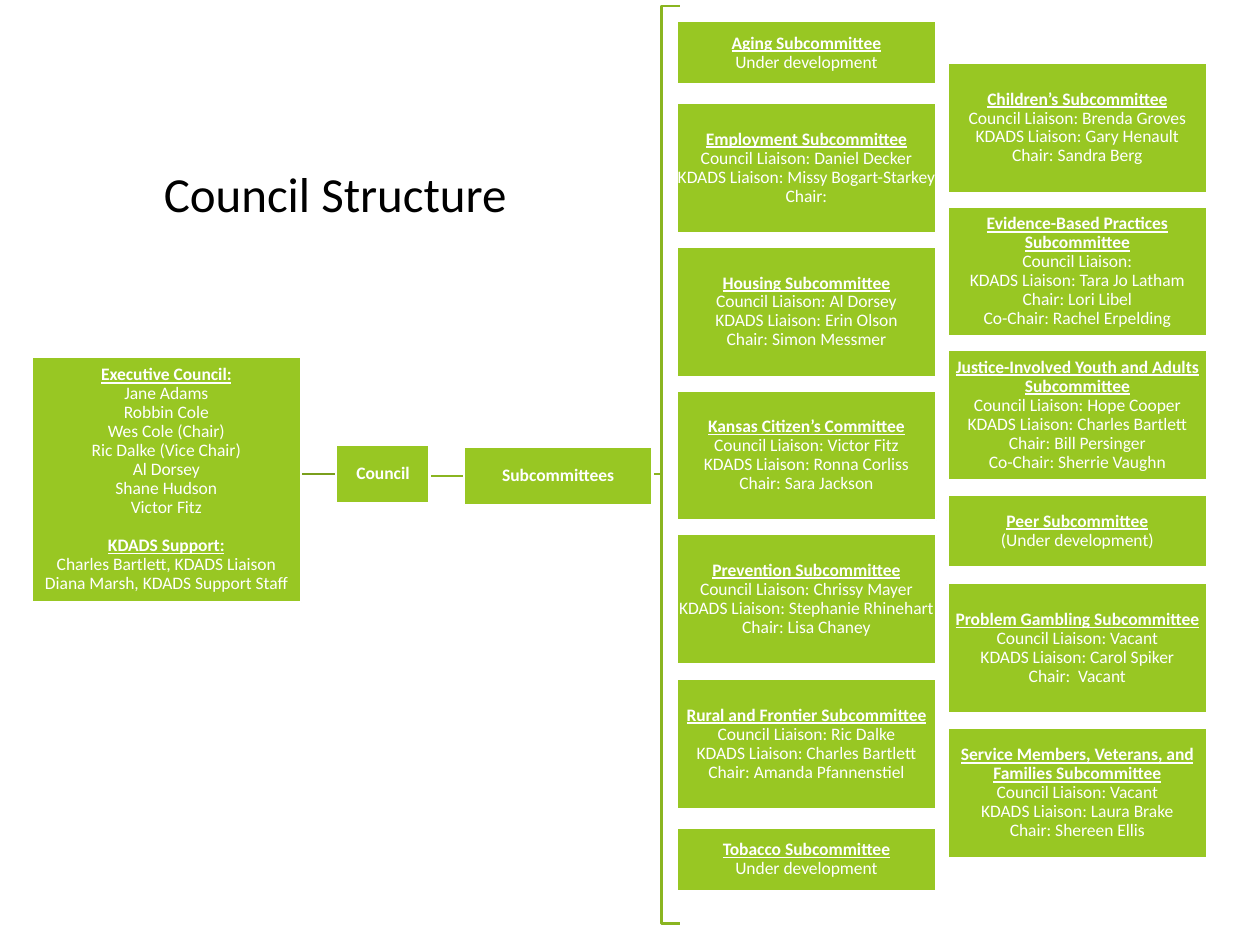
from dataclasses import dataclass

from lxml.etree import SubElement
from pptx import Presentation
from pptx.dml.color import RGBColor
from pptx.enum.shapes import MSO_CONNECTOR, MSO_SHAPE
from pptx.enum.text import MSO_ANCHOR, PP_ALIGN
from pptx.oxml.ns import qn
from pptx.util import Inches, Pt


@dataclass(frozen=True)
class Theme:
    font: str = "Calibri"
    title_size: Pt = Pt(28)
    label_size: Pt = Pt(10)
    line_width: Pt = Pt(1.25)
    black: RGBColor = RGBColor(0x00, 0x00, 0x00)
    white: RGBColor = RGBColor(0xFF, 0xFF, 0xFF)
    green: RGBColor = RGBColor(0x98, 0xC7, 0x23)
    link: RGBColor = RGBColor(0x8A, 0xB5, 0x20)
    dark_link: RGBColor = RGBColor(0x7A, 0x9F, 0x1C)


@dataclass(frozen=True)
class Box:
    """A rectangle measured in inches."""
    left: float
    top: float
    width: float
    height: float

    def lengths(self):
        return [Inches(n) for n in (self.left, self.top, self.width, self.height)]


THEME = Theme()
TALL = 1.03
SHORT = 0.5

EXECUTIVE = [
    ("Executive Council:", ["Jane Adams", "Robbin Cole", "Wes Cole (Chair)",
                            "Ric Dalke (Vice Chair)", "Al Dorsey", "Shane Hudson",
                            "Victor Fitz"]),
    ("KDADS Support:", ["Charles Bartlett, KDADS Liaison",
                        "Diana Marsh, KDADS Support Staff"]),
]

# Each entry: top within the column, height, heading, lines
INNER_COLUMN = [
    (0, SHORT, "Aging Subcommittee", ["Under development"]),
    (0.65, TALL, "Employment Subcommittee",
     ["Council Liaison: Daniel Decker", "KDADS Liaison: Missy Bogart-Starkey", "Chair:"]),
    (1.79, TALL, "Housing Subcommittee",
     ["Council Liaison: Al Dorsey", "KDADS Liaison: Erin Olson", "Chair: Simon Messmer"]),
    (2.93, TALL, "Kansas Citizen’s Committee",
     ["Council Liaison: Victor Fitz", "KDADS Liaison: Ronna Corliss", "Chair: Sara Jackson"]),
    (4.07, TALL, "Prevention Subcommittee",
     ["Council Liaison: Chrissy Mayer", "KDADS Liaison: Stephanie Rhinehart",
      "Chair: Lisa Chaney"]),
    (5.22, TALL, "Rural and Frontier Subcommittee",
     ["Council Liaison: Ric Dalke", "KDADS Liaison: Charles Bartlett",
      "Chair: Amanda Pfannenstiel"]),
    (6.4, SHORT, "Tobacco Subcommittee", ["Under development"]),
]
OUTER_COLUMN = [
    (0, TALL, "Children’s Subcommittee",
     ["Council Liaison: Brenda Groves", "KDADS Liaison: Gary Henault", "Chair: Sandra Berg"]),
    (1.14, TALL, "Evidence-Based Practices Subcommittee",
     ["Council Liaison:", "KDADS Liaison: Tara Jo Latham", "Chair: Lori Libel",
      "Co-Chair: Rachel Erpelding"]),
    (2.28, TALL, "Justice-Involved Youth and Adults Subcommittee",
     ["Council Liaison: Hope Cooper", "KDADS Liaison: Charles Bartlett",
      "Chair: Bill Persinger", "Co-Chair: Sherrie Vaughn"]),
    (3.43, 0.57, "Peer Subcommittee", ["(Under development)"]),
    (4.13, TALL, "Problem Gambling Subcommittee",
     ["Council Liaison: Vacant", "KDADS Liaison: Carol Spiker", "Chair:  Vacant"]),
    (5.28, TALL, "Service Members, Veterans, and Families Subcommittee",
     ["Council Liaison: Vacant", "KDADS Liaison: Laura Brake", "Chair: Shereen Ellis"]),
]


def style_line(line, color):
    line.color.rgb = color
    line.width = THEME.line_width


def add_title(page, box):
    title = page.shapes.title
    title.left, title.top, title.width, title.height = box.lengths()
    title.text_frame.text = "Council Structure"
    title.text_frame.vertical_anchor = MSO_ANCHOR.MIDDLE
    para = title.text_frame.paragraphs[0]
    para.alignment = PP_ALIGN.RIGHT
    para.font.name = THEME.font
    para.font.size = THEME.title_size
    para.font.color.rgb = THEME.black


def add_card(page, box, sections, underline=True):
    """Add a green box holding (heading, lines) sections."""
    card = page.shapes.add_shape(MSO_SHAPE.RECTANGLE, *box.lengths())
    card.shadow.inherit = False
    card.fill.solid()
    card.fill.fore_color.rgb = THEME.green
    style_line(card.line, THEME.white)
    frame = card.text_frame
    frame.word_wrap = True
    frame.vertical_anchor = MSO_ANCHOR.MIDDLE
    frame.margin_left = frame.margin_right = frame.margin_top = frame.margin_bottom = 0

    para = frame.paragraphs[0]
    for number, (heading, lines) in enumerate(sections):
        for row, text in enumerate([heading, *lines]):
            is_heading = row == 0
            if number or row:
                para = frame.add_paragraph()
            if number and is_heading:
                para.space_before = Pt(11)
            para.text = text
            para.alignment = PP_ALIGN.CENTER
            para.line_spacing = 0.9
            para.font.name = THEME.font
            para.font.size = THEME.label_size
            para.font.color.rgb = THEME.white
            para.font.bold = is_heading
            para.font.underline = is_heading and underline
    return card


def add_link(page, left, right, y, color):
    link = page.shapes.add_connector(
        MSO_CONNECTOR.STRAIGHT, Inches(left), Inches(y), Inches(right), Inches(y))
    style_line(link.line, color)
    SubElement(link._element.spPr, qn("a:effectLst"))
    return link


def add_bracket(page, box, stem_y):
    """Add the two arms that lead from the stem to the top and bottom of the box."""
    middle = box.left + box.width / 2
    right = box.left + box.width
    for end_y in (box.top, box.top + box.height):
        corners = [(middle, stem_y), (middle, end_y), (right, end_y)]
        builder = page.shapes.build_freeform(Inches(box.left), Inches(stem_y))
        builder.add_line_segments([(Inches(x), Inches(y)) for x, y in corners], close=False)
        arm = builder.convert_to_shape()
        arm.shadow.inherit = False
        arm.fill.background()
        style_line(arm.line, THEME.link)


def add_council_chain(page, box):
    """Add the executive council, council and subcommittees boxes with their links."""
    council_link = add_link(page, box.left + 2.12, box.left + 2.42, box.top + 0.93,
                            THEME.dark_link)
    subcommittees_link = add_link(page, box.left + 3.14, box.left + 3.43, box.top + 0.95,
                                  THEME.link)
    add_card(page, Box(box.left, box.top, 2.14, box.height), EXECUTIVE)
    council = add_card(page, Box(box.left + 2.42, box.top + 0.7, 0.74, 0.46),
                       [("Council", [])], underline=False)
    subcommittees = add_card(page, Box(box.left + 3.43, box.top + 0.72, 1.5, 0.46),
                             [("Subcommittees", [])], underline=False)
    council_link.end_connect(council, 1)
    subcommittees_link.end_connect(subcommittees, 1)


def add_subcommittee_column(page, box, entries):
    for top, height, heading, lines in entries:
        add_card(page, Box(box.left, box.top + top, box.width, height), [(heading, lines)])


def main():
    deck = Presentation()
    deck.slide_width, deck.slide_height = Inches(10), Inches(7.5)
    page = deck.slides.add_slide(deck.slide_layouts[5])
    add_title(page, Box(0.62, 0.82, 3.5, 1.42))
    add_bracket(page, Box(5.1, 0.05, 0.3, 7.28), stem_y=3.76)
    add_council_chain(page, Box(0.25, 2.83, 4.93, 1.95))
    add_subcommittee_column(page, Box(5.37, 0.17, 2.06, 6.9), INNER_COLUMN)
    add_subcommittee_column(page, Box(7.52, 0.5, 2.06, 6.31), OUTER_COLUMN)
    deck.save("out.pptx")


if __name__ == "__main__":
    main()
